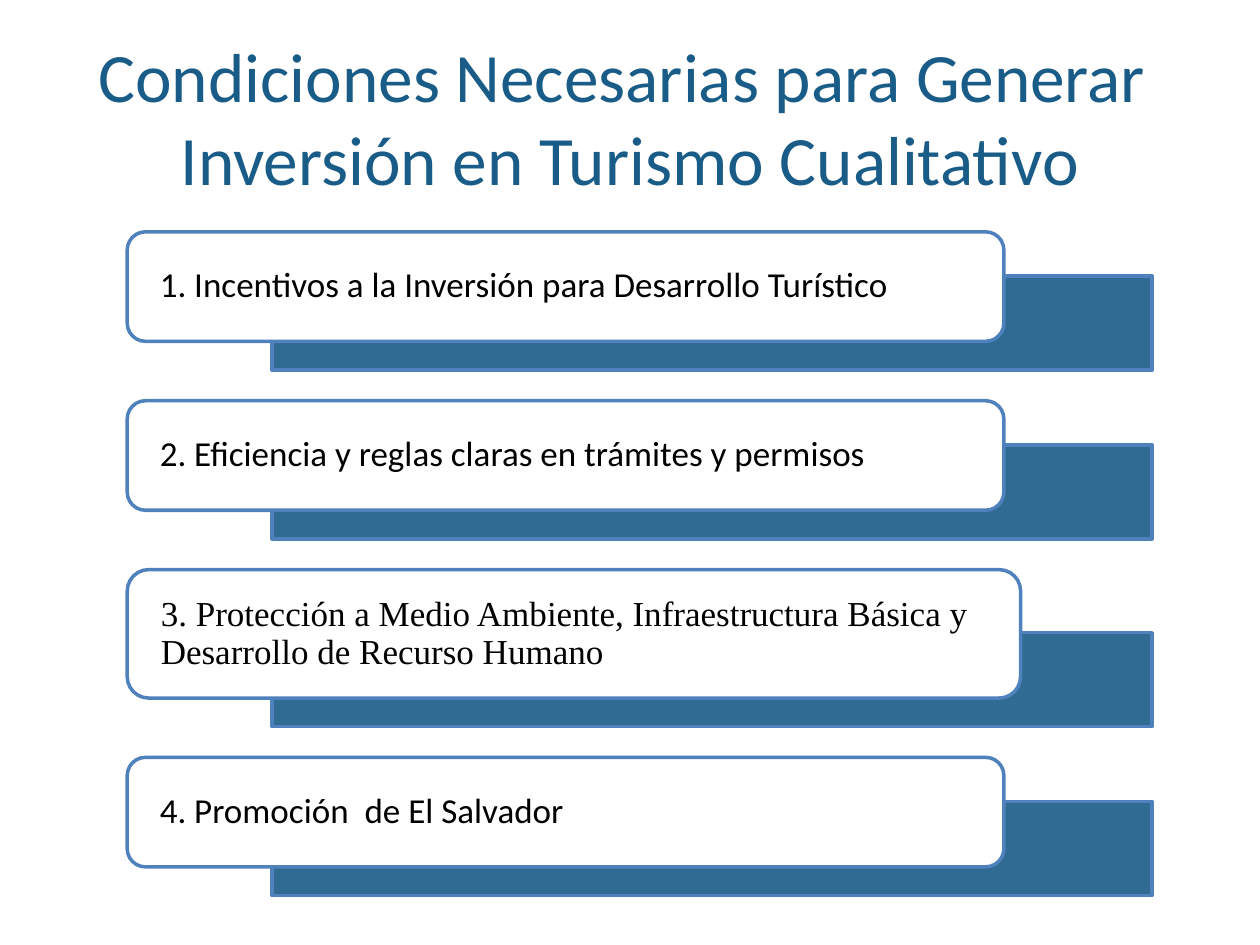
from lxml import etree
from pptx import Presentation
from pptx.dml.color import RGBColor
from pptx.enum.shapes import MSO_SHAPE
from pptx.enum.text import MSO_ANCHOR, PP_ALIGN
from pptx.oxml.ns import qn
from pptx.util import Pt

RECTANGLE = MSO_SHAPE.RECTANGLE
ROUNDED = MSO_SHAPE.ROUNDED_RECTANGLE
MIDDLE = MSO_ANCHOR.MIDDLE
LEFT, CENTER = PP_ALIGN.LEFT, PP_ALIGN.CENTER

BLUE, OUTLINE, WHITE, BLACK = "195C87", "4F81BD", "FFFFFF", "000000"

# text, font, card width, card height
CONDITIONS = [
    ("1. Incentivos a la Inversión para Desarrollo Turístico", "Calibri", 501, 62.6),
    ("2. Eficiencia y reglas claras en trámites y permisos", "Calibri", 501, 62.6),
    ("3. Protección a Medio Ambiente, Infraestructura Básica y Desarrollo de Recurso Humano",
     "Times New Roman", 510.5, 73.4),
    ("4. Promoción  de El Salvador", "Calibri", 501, 62.6),
]
CARD_LEFT, FIRST_TOP, CARD_GAP = 72.7, 132.5, 33.9
BAR_LEFT, BAR_WIDTH, BAR_HEIGHT, BAR_OVERLAP = 155.5, 502.9, 53.7, 37.3


def color(value):
    return RGBColor.from_string(value)


def add_panel(kind, left, top, width, height, fill):
    panel = page.shapes.add_shape(kind, Pt(left), Pt(top), Pt(width), Pt(height))
    panel.shadow.inherit = False
    panel.fill.solid()
    panel.fill.fore_color.rgb = color(fill)
    panel.line.color.rgb = color(OUTLINE)
    panel.line.width = Pt(2)
    return panel


deck = Presentation()
deck.slide_width, deck.slide_height = Pt(720), Pt(540)
page = deck.slides.add_slide(deck.slide_layouts[6])

title = page.shapes.add_textbox(Pt(36), Pt(21.6), Pt(648), Pt(90))
frame = title.text_frame
frame.word_wrap = True
frame.vertical_anchor = MIDDLE
frame.text = "Condiciones Necesarias para Generar \vInversión en Turismo Cualitativo"
para = frame.paragraphs[0]
para.alignment = CENTER
for span in para.runs:
    span.font.name = "Calibri"
    span.font.size = Pt(39.6)
    span.font.color.rgb = color(BLUE)

top = FIRST_TOP
for text, font, width, height in CONDITIONS:
    bar = add_panel(RECTANGLE, BAR_LEFT, top + height - BAR_OVERLAP, BAR_WIDTH, BAR_HEIGHT, BLUE)
    bar_color = bar.fill._xPr.find(qn("a:solidFill"))[0]
    etree.SubElement(bar_color, qn("a:alpha"), val="90000")

    card = add_panel(ROUNDED, CARD_LEFT, top, width, height, WHITE)
    frame = card.text_frame
    frame.word_wrap = True
    frame.vertical_anchor = MIDDLE
    frame.margin_left = frame.margin_right = Pt(15.6)
    frame.margin_top = frame.margin_bottom = 0
    frame.text = text
    para = frame.paragraphs[0]
    para.alignment = LEFT
    para.line_spacing = 0.9
    span = para.runs[0]
    span.font.name = font
    span.font.size = Pt(20)
    span.font.color.rgb = color(BLACK)
    top += height + CARD_GAP

deck.save("out.pptx")
